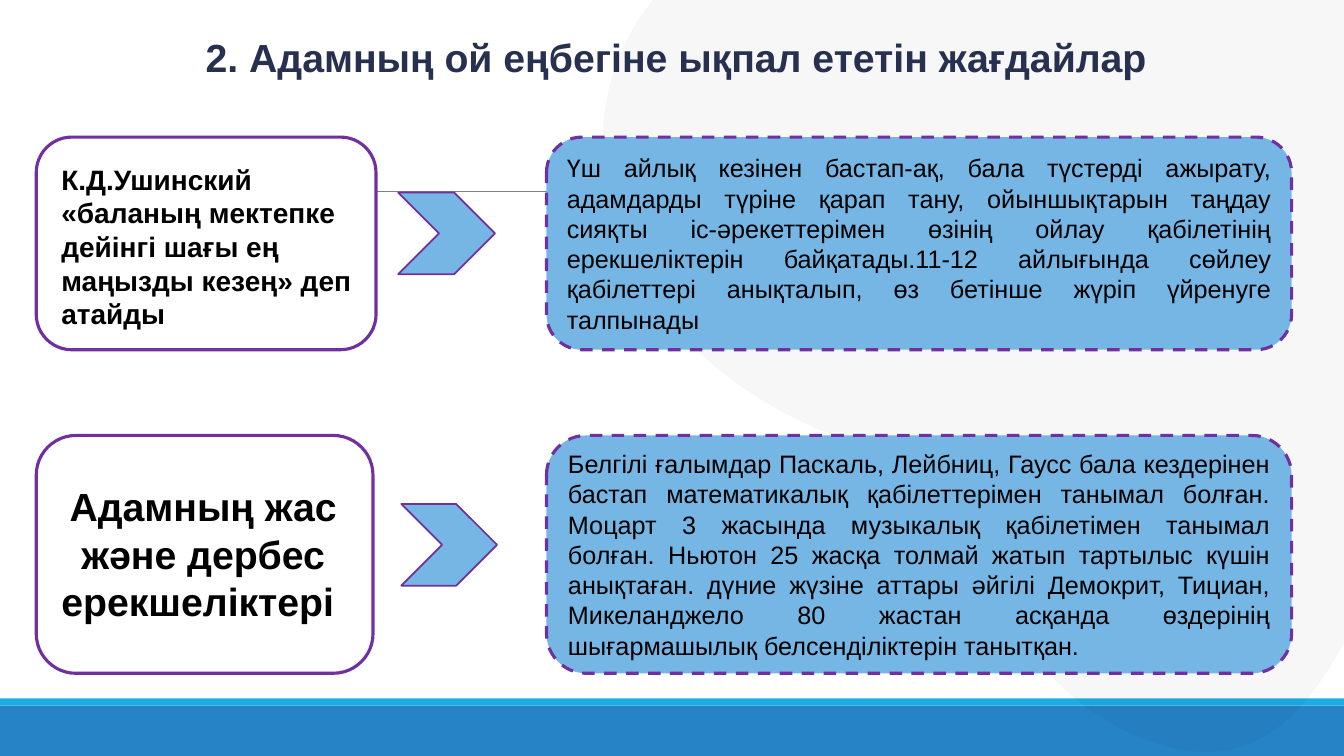
from lxml import etree
from pptx import Presentation
from pptx.dml.color import RGBColor
from pptx.enum.dml import MSO_LINE
from pptx.enum.shapes import MSO_CONNECTOR, MSO_SHAPE as SHAPE
from pptx.enum.text import MSO_ANCHOR as ANCHOR, PP_ALIGN as ALIGN
from pptx.oxml.ns import qn
from pptx.util import Inches, Pt

WHITE = RGBColor(0xFF, 0xFF, 0xFF)
BLACK = RGBColor(0, 0, 0)
NAVY = RGBColor(0x27, 0x30, 0x4E)
GRAY = RGBColor(0x80, 0x80, 0x80)
FOOTER_BLUE = RGBColor(0x26, 0x83, 0xC6)
STRIP_BLUE = RGBColor(0x1C, 0xAD, 0xE4)
SOFT_BLUE = RGBColor(0x75, 0xB6, 0xE5)
PURPLE = RGBColor(0x70, 0x30, 0xA0)

TITLE = "2. Адамның ой еңбегіне ықпал ететін жағдайлар"
QUOTE = "К.Д.Ушинский «баланың мектепке дейінгі шағы ең маңызды кезең» деп атайды"
TOPIC = "Адамның жас және дербес ерекшеліктері "
INFANCY = (
    "Үш айлық кезінен бастап-ақ, бала түстерді ажырату, адамдарды түріне қарап тану, "
    "ойыншықтарын таңдау сияқты іс-әрекеттерімен өзінің ойлау қабілетінің ерекшеліктерін "
    "байқатады.11-12 айлығында сөйлеу қабілеттері анықталып, өз бетінше жүріп үйренуге "
    "талпынады"
)
SCHOLARS = (
    "Белгілі ғалымдар Паскаль, Лейбниц, Гаусс бала кездерінен бастап математикалық "
    "қабілеттерімен танымал болған. Моцарт 3 жасында музыкалық қабілетімен танымал болған. "
    "Ньютон 25 жасқа толмай жатып тартылыс күшін анықтаған. дүние жүзіне аттары әйгілі "
    "Демокрит, Тициан, Микеланджело 80 жастан асқанда өздерінің шығармашылық "
    "белсенділіктерін танытқан."
)

# Backdrop blob: start point, then cubic curves (two controls and an end)
BLOB_START = (12.24, 7.43)
BLOB_CURVES = [
    ((11.94, 7.5), (11.63, 7.44), (11.36, 7.34)),
    ((10.96, 7.18), (10.59, 6.92), (10.33, 6.59)),
    ((9.84, 5.98), (9.65, 5.13), (9.01, 4.68)),
    ((8.75, 4.5), (8.44, 4.39), (8.14, 4.27)),
    ((7.34, 3.93), (6.63, 3.36), (6.25, 2.59)),
    ((5.86, 1.82), (5.87, 0.84), (6.37, 0.14)),
    ((6.4, 0.1), (6.44, 0.04), (6.48, 0)),
    ((13.33, 0), (13.33, 0), (13.33, 0)),
    ((13.33, 6.38), (13.33, 6.38), (13.33, 6.38)),
    ((13.07, 6.85), (12.75, 7.3), (12.24, 7.43)),
]
CURVE_STEPS = 12


def paint(shape, fill, line=None, width=0, dash=None):
    shape.shadow.inherit = False
    shape.fill.solid()
    shape.fill.fore_color.rgb = fill
    if line is None:
        shape.line.fill.background()
        return
    shape.line.color.rgb = line
    shape.line.width = Pt(width)
    if dash:
        shape.line.dash_style = dash


def add_block(slide, kind, box, fill, **outline):
    block = slide.shapes.add_shape(kind, *map(Inches, box))
    paint(block, fill, **outline)
    return block


def write(holder, text, size, color=BLACK, bold=False, align=ALIGN.LEFT, anchor=ANCHOR.TOP):
    frame = holder.text_frame
    frame.word_wrap = True
    frame.vertical_anchor = anchor
    paragraph = frame.paragraphs[0]
    paragraph.alignment = align
    run = paragraph.add_run()
    run.text = text
    formats = {"name": "Arial", "size": Pt(size), "bold": bold}
    for key, value in formats.items():
        setattr(run.font, key, value)
    run.font.color.rgb = color


def add_label(slide, box, text, size, **style):
    label = slide.shapes.add_textbox(*map(Inches, box))
    write(label, text, size, bold=True, **style)


def bezier(start, control1, control2, end, t):
    return tuple(
        (1 - t) ** 3 * a + 3 * (1 - t) ** 2 * t * b + 3 * (1 - t) * t ** 2 * c + t ** 3 * d
        for a, b, c, d in zip(start, control1, control2, end)
    )


def add_blob(slide):
    outline, start = [], BLOB_START
    for curve in BLOB_CURVES:
        outline += [bezier(start, *curve, step / CURVE_STEPS) for step in range(1, CURVE_STEPS + 1)]
        start = curve[-1]
    builder = slide.shapes.build_freeform(*map(Inches, BLOB_START))
    builder.add_line_segments([(Inches(x), Inches(y)) for x, y in outline])
    blob = builder.convert_to_shape()
    paint(blob, BLACK)
    color = blob.fill._xPr.find(qn("a:solidFill"))[0]
    etree.SubElement(color, qn("a:alpha")).set("val", "3000")


def add_rule(slide):
    ends = map(Inches, (1.31, 1.9, 12.21, 1.9))
    rule = slide.shapes.add_connector(MSO_CONNECTOR.STRAIGHT, *ends)
    rule.line.color.rgb = GRAY
    rule.line.width = Pt(0.5)
    etree.SubElement(rule._element.spPr, qn("a:effectLst"))


def add_row(slide, top, height, card_width, chevron_box, text):
    add_block(slide, SHAPE.CHEVRON, chevron_box, SOFT_BLUE, line=PURPLE, width=1.25)
    add_block(slide, SHAPE.ROUNDED_RECTANGLE, (0.36, top, card_width, height), WHITE,
              line=PURPLE, width=2.25)
    detail = add_block(slide, SHAPE.ROUNDED_RECTANGLE, (5.42, top, 7.39, height), SOFT_BLUE,
                       line=PURPLE, width=2.25, dash=MSO_LINE.DASH)
    write(detail, text, 18, align=ALIGN.JUSTIFY, anchor=ANCHOR.MIDDLE)


def main():
    deck = Presentation()
    deck.slide_width, deck.slide_height = Inches(13.33), Inches(7.5)
    slide = deck.slides.add_slide(deck.slide_layouts[6])

    # Backdrop
    add_block(slide, SHAPE.RECTANGLE, (0, 7, 13.33, 0.5), FOOTER_BLUE)
    add_block(slide, SHAPE.RECTANGLE, (0, 6.93, 13.33, 0.07), STRIP_BLUE)
    add_rule(slide)
    add_blob(slide)

    # Rows: card, chevron, detail
    add_row(slide, 1.36, 2.11, 3.37, (3.95, 1.91, 0.96, 0.81), INFANCY)
    add_row(slide, 4.32, 2.36, 3.34, (3.98, 5, 0.95, 0.81), SCHOLARS)

    # Title and card labels
    add_label(slide, (1.04, 0.28, 11.33, 0.57), TITLE, 28, color=NAVY, align=ALIGN.CENTER)
    add_label(slide, (0.33, 4.74, 3.37, 1.51), TOPIC, 28, align=ALIGN.CENTER)
    add_label(slide, (0.51, 1.56, 3.22, 1.78), QUOTE, 20)

    deck.save("out.pptx")


if __name__ == "__main__":
    main()
